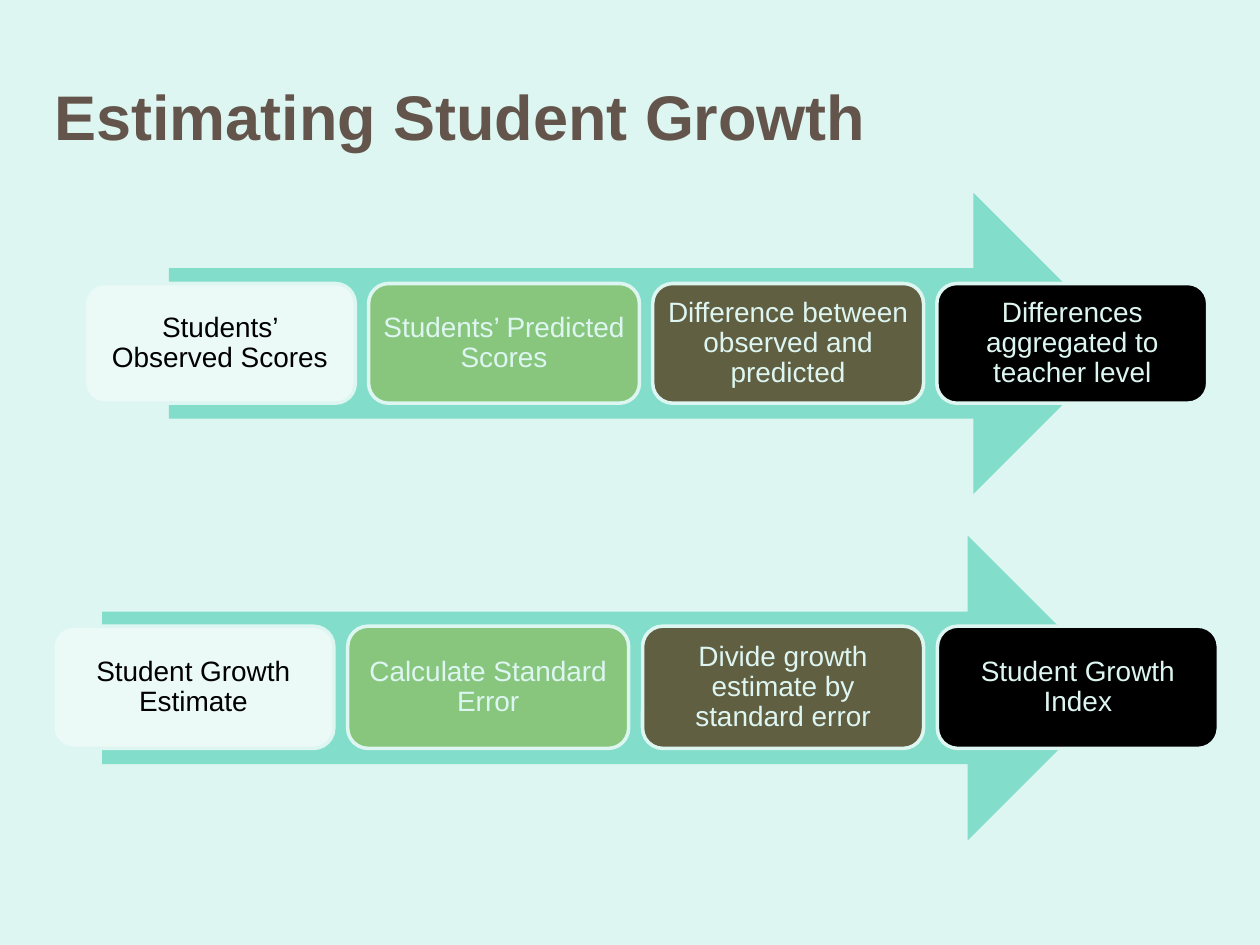
from dataclasses import dataclass

from pptx import Presentation
from pptx.dml.color import RGBColor
from pptx.enum.shapes import MSO_SHAPE as Kind
from pptx.enum.text import MSO_ANCHOR as Anchor, PP_ALIGN as Align
from pptx.util import Inches, Pt

PALE = "DEF6F1"
STYLES = [("ECFAF7", "000000"), ("88C67E", PALE), ("615F41", PALE), ("000000", PALE)]


@dataclass
class Box:
    left: float
    top: float
    width: float
    height: float


@dataclass
class Flow:
    arrow: Box
    first: Box
    pitch: float
    steps: list[str]


FLOWS = [
    Flow(Box(1.34, 1.53, 7.58, 2.39), Box(0.67, 2.25, 2.15, 0.95), 2.255, [
        "Students’ Observed Scores",
        "Students’ Predicted Scores",
        "Difference between observed and predicted",
        "Differences aggregated to teacher level",
    ]),
    Flow(Box(0.81, 4.25, 8.08, 2.42), Box(0.42, 4.97, 2.23, 0.97), 2.34, [
        "Student Growth Estimate",
        "Calculate Standard Error",
        "Divide growth estimate by standard error",
        "Student Growth Index",
    ]),
]


def paint(fill, color: str) -> None:
    fill.solid()
    fill.fore_color.rgb = RGBColor.from_string(color)


def write(shape, text: str, *, size: int, color: str, bold=False,
          align=Align.CENTER, space=1.0, inset=0.07) -> None:
    frame = shape.text_frame
    frame.word_wrap = True
    frame.vertical_anchor = Anchor.MIDDLE
    frame.margin_left = frame.margin_right = Inches(inset)
    frame.margin_top = frame.margin_bottom = Inches(0.07)
    frame.text = text
    para = frame.paragraphs[0]
    para.alignment = align
    para.line_spacing = space
    font = para.runs[0].font
    font.name, font.size, font.bold = "Arial", Pt(size), bold
    font.color.rgb = RGBColor.from_string(color)


def draw(slide, kind: Kind, box: Box, color: str, line: str | None = None):
    shape = slide.shapes.add_shape(
        kind, Inches(box.left), Inches(box.top), Inches(box.width), Inches(box.height))
    shape.shadow.inherit = False
    paint(shape.fill, color)
    if line:
        paint(shape.line.fill, line)
        shape.line.width = Pt(2)
    else:
        shape.line.fill.background()
    return shape


def draw_flow(slide, flow: Flow) -> None:
    draw(slide, Kind.RIGHT_ARROW, flow.arrow, "82DDCA")
    base = flow.first
    for i, (step, (fill, ink)) in enumerate(zip(flow.steps, STYLES)):
        box = Box(base.left + i * flow.pitch, base.top, base.width, base.height)
        card = draw(slide, Kind.ROUNDED_RECTANGLE, box, fill, PALE)
        write(card, step, size=16, color=ink, space=0.9)


def main() -> None:
    deck = Presentation()
    deck.slide_width, deck.slide_height = Inches(10), Inches(7.5)
    slide = deck.slides.add_slide(deck.slide_layouts[5])
    paint(slide.background.fill, PALE)
    title = slide.shapes.title
    title.left, title.top = Inches(0.33), Inches(0.33)
    title.width, title.height = Inches(9.33), Inches(1.17)
    write(title, "Estimating Student Growth", size=36, color="63554C",
          bold=True, align=Align.LEFT, inset=0.1)
    for flow in FLOWS:
        draw_flow(slide, flow)
    deck.save("out.pptx")


if __name__ == "__main__":
    main()
